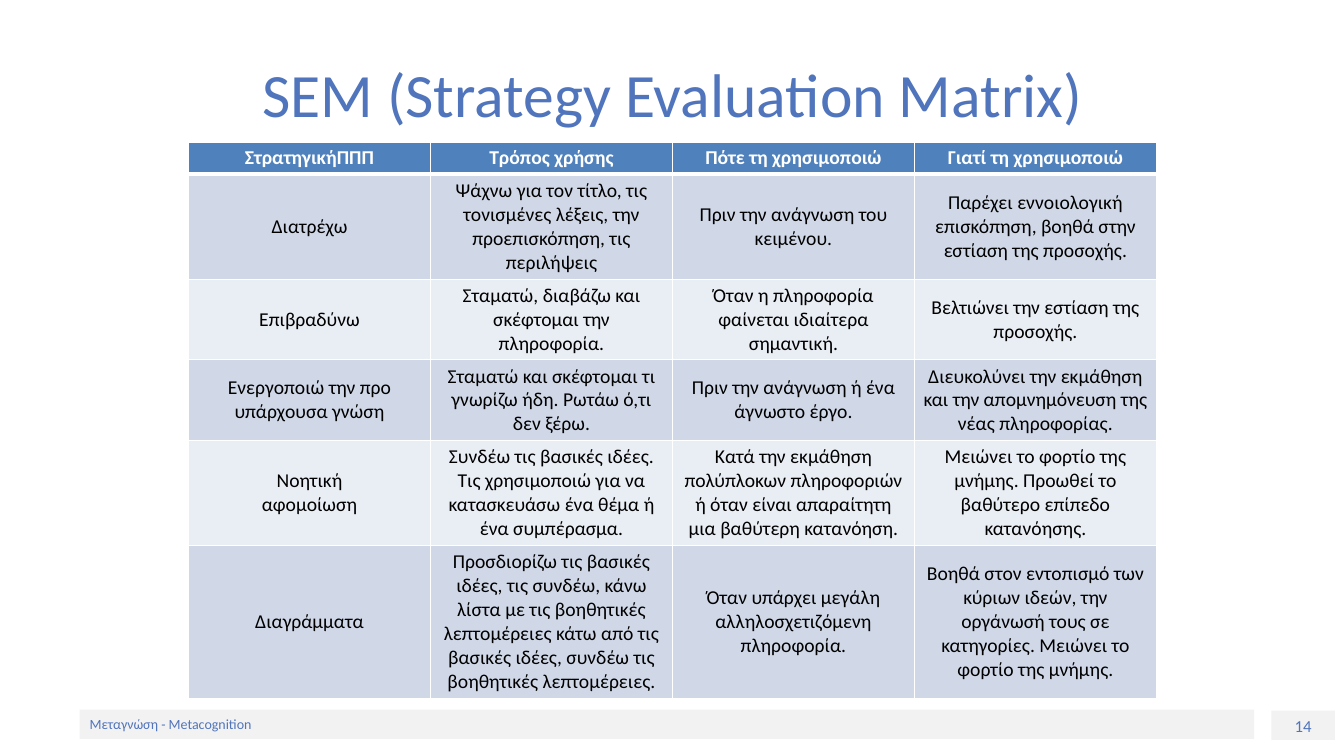
from dataclasses import dataclass

from lxml.etree import SubElement
from pptx import Presentation
from pptx.dml.color import RGBColor
from pptx.enum.shapes import MSO_SHAPE
from pptx.enum.text import MSO_ANCHOR, PP_ALIGN
from pptx.oxml.ns import qn
from pptx.util import Inches, Pt


@dataclass(frozen=True)
class Theme:
    font: str = "Calibri"
    accent: str = "5075BC"
    bar: str = "F2F2F2"
    header: str = "4F81BD"
    bands: tuple[str, str] = ("D0D8E8", "E9EDF4")
    white: str = "FFFFFF"
    black: str = "000000"
    title_size: int = 44
    table_size: int = 14
    number_size: int = 12
    footer_size: int = 10
    thin_line: int = 1
    header_line: int = 3


@dataclass(frozen=True)
class Bar:
    text: str
    left: float
    top: float
    width: float
    height: float
    size: int
    alignment: PP_ALIGN
    anchor: MSO_ANCHOR


@dataclass(frozen=True)
class Strategy:
    height: float
    name: str
    use: str
    when: str
    why: str


THEME = Theme()

BARS = [
    Bar("14", 12.61, 7.05, 0.63, 0.29, THEME.number_size, PP_ALIGN.CENTER, MSO_ANCHOR.TOP),
    Bar("Μεταγνώση - Metacognition", 0.79, 7.04, 11.65, 0.29, THEME.footer_size,
        PP_ALIGN.LEFT, MSO_ANCHOR.MIDDLE),
]

ROWS = [
    Strategy(0.32, "ΣτρατηγικήΠΠΠ", "Τρόπος χρήσης", "Πότε τη χρησιμοποιώ",
             "Γιατί τη χρησιμοποιώ"),
    Strategy(1.04, "Διατρέχω",
             "Ψάχνω για τον τίτλο, τις τονισμένες λέξεις, την προεπισκόπηση, τις περιλήψεις",
             "Πριν την ανάγνωση του κειμένου.",
             "Παρέχει εννοιολογική επισκόπηση, βοηθά στην εστίαση της προσοχής."),
    Strategy(0.8, "Επιβραδύνω",
             "Σταματώ, διαβάζω και σκέφτομαι την πληροφορία.",
             "Όταν η πληροφορία φαίνεται ιδιαίτερα σημαντική.",
             "Βελτιώνει την εστίαση της προσοχής."),
    Strategy(0.8, "Ενεργοποιώ την προ υπάρχουσα γνώση",
             "Σταματώ και σκέφτομαι τι γνωρίζω ήδη. Ρωτάω ό,τι δεν ξέρω.",
             "Πριν την ανάγνωση ή ένα άγνωστο έργο.",
             "Διευκολύνει την εκμάθηση και την απομνημόνευση της νέας πληροφορίας."),
    Strategy(1.04, "Νοητική\nαφομοίωση",
             "Συνδέω τις βασικές ιδέες. Τις χρησιμοποιώ για να κατασκευάσω ένα θέμα "
             "ή ένα συμπέρασμα.",
             "Κατά την εκμάθηση πολύπλοκων πληροφοριών ή όταν είναι απαραίτητη μια "
             "βαθύτερη κατανόηση.",
             "Μειώνει το φορτίο της μνήμης. Προωθεί το βαθύτερο επίπεδο κατανόησης."),
    Strategy(1.52, "Διαγράμματα",
             "Προσδιορίζω τις βασικές ιδέες, τις συνδέω, κάνω λίστα με τις βοηθητικές "
             "λεπτομέρειες κάτω από τις βασικές ιδέες, συνδέω τις βοηθητικές λεπτομέρειες.",
             "Όταν υπάρχει μεγάλη αλληλοσχετιζόμενη πληροφορία.",
             "Βοηθά στον εντοπισμό των κύριων ιδεών, την οργάνωσή τους σε κατηγορίες. "
             "Μειώνει το φορτίο της μνήμης."),
]


def write_text(frame, text: str, size: int, color: str,
               alignment: PP_ALIGN = PP_ALIGN.CENTER, bold: bool = False) -> None:
    frame.text = text
    for paragraph in frame.paragraphs:
        paragraph.alignment = alignment
        paragraph.font.name = THEME.font
        paragraph.font.size = Pt(size)
        paragraph.font.bold = bold
        paragraph.font.color.rgb = RGBColor.from_string(color)


def add_bar(slide, bar: Bar) -> None:
    shape = slide.shapes.add_shape(MSO_SHAPE.RECTANGLE, Inches(bar.left), Inches(bar.top),
                                   Inches(bar.width), Inches(bar.height))
    shape.shadow.inherit = False
    shape.fill.solid()
    shape.fill.fore_color.rgb = RGBColor.from_string(THEME.bar)
    shape.line.fill.background()
    shape.text_frame.vertical_anchor = bar.anchor
    write_text(shape.text_frame, bar.text, bar.size, THEME.accent, bar.alignment)


def set_borders(cell, top: int, bottom: int) -> None:
    properties = cell._tc.get_or_add_tcPr()
    widths = {"a:lnL": THEME.thin_line, "a:lnR": THEME.thin_line, "a:lnT": top, "a:lnB": bottom}
    for tag, width in widths.items():
        line = SubElement(properties, qn(tag), w=str(Pt(width)))
        SubElement(SubElement(line, qn("a:solidFill")), qn("a:srgbClr"), val=THEME.white)


def format_cell(cell, text: str, row_index: int) -> None:
    is_header = row_index == 0
    set_borders(cell, THEME.header_line if row_index == 1 else THEME.thin_line,
                THEME.header_line if is_header else THEME.thin_line)
    cell.fill.solid()
    fill = THEME.header if is_header else THEME.bands[(row_index - 1) % 2]
    cell.fill.fore_color.rgb = RGBColor.from_string(fill)
    cell.vertical_anchor = MSO_ANCHOR.MIDDLE
    cell.margin_left = cell.margin_right = Inches(0.08)
    cell.margin_top = cell.margin_bottom = Inches(0.04)
    write_text(cell.text_frame, text, THEME.table_size,
               THEME.white if is_header else THEME.black, bold=is_header)


def add_matrix(slide, rows: list[Strategy]) -> None:
    column_count, column_width = 4, 2.4
    height = sum(row.height for row in rows)
    table = slide.shapes.add_table(len(rows), column_count, Inches(1.87), Inches(1.41),
                                   Inches(column_count * column_width), Inches(height)).table
    for column in table.columns:
        column.width = Inches(column_width)
    for row_index, row in enumerate(rows):
        table.rows[row_index].height = Inches(row.height)
        for column_index, text in enumerate((row.name, row.use, row.when, row.why)):
            format_cell(table.cell(row_index, column_index), text, row_index)


def main() -> None:
    presentation = Presentation()
    presentation.slide_width, presentation.slide_height = Inches(13.33), Inches(7.5)
    slide = presentation.slides.add_slide(presentation.slide_layouts[5])

    # Footer bars
    for bar in BARS:
        add_bar(slide, bar)

    # Title
    title = slide.shapes.title
    title.left, title.top = Inches(0.67), Inches(0.3)
    title.width, title.height = Inches(12), Inches(1.25)
    title.text_frame.vertical_anchor = MSO_ANCHOR.MIDDLE
    write_text(title.text_frame, "SEM (Strategy Evaluation Matrix)", THEME.title_size,
               THEME.accent)

    # Strategy table
    add_matrix(slide, ROWS)
    presentation.save("out.pptx")


if __name__ == "__main__":
    main()
